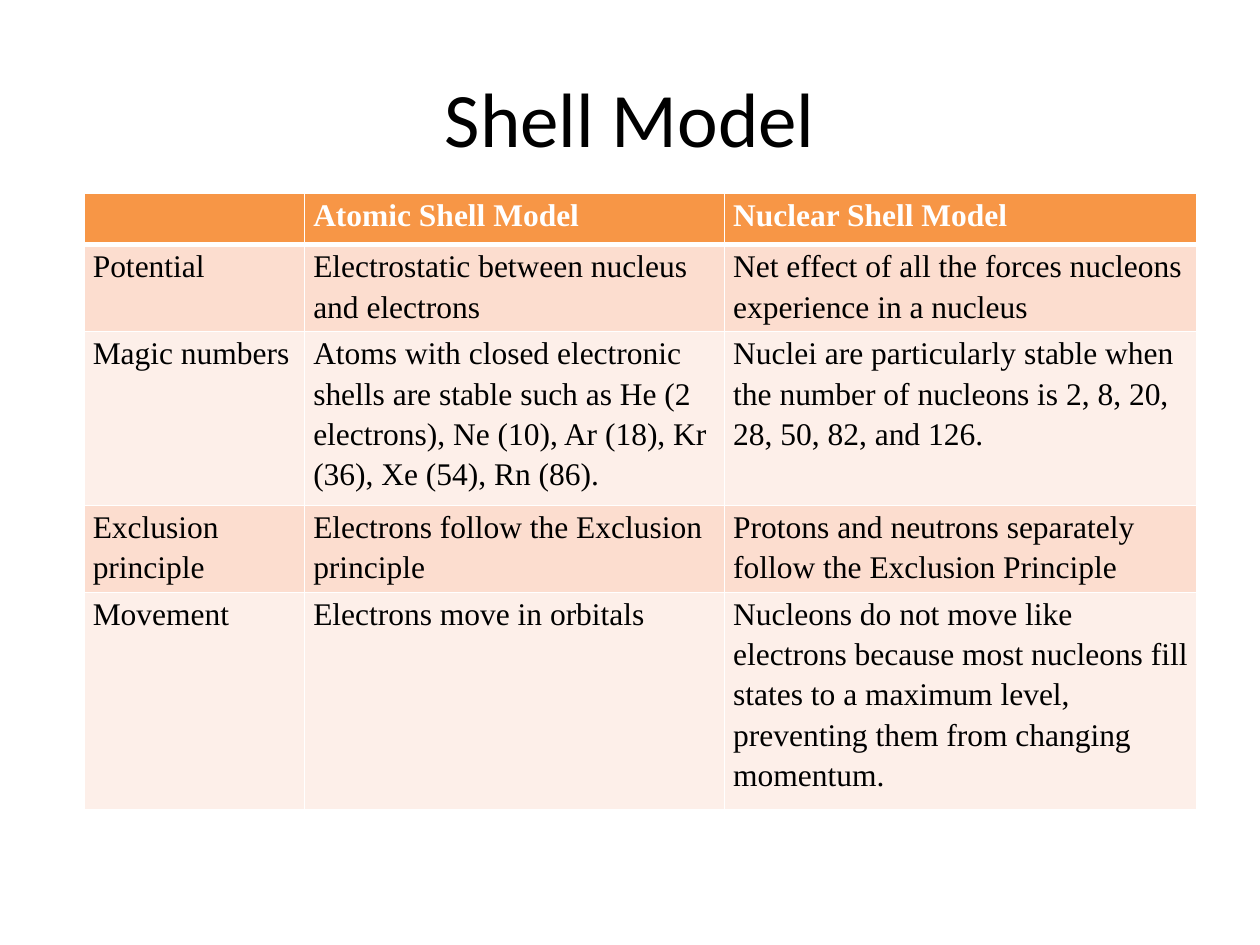
import dataclasses

import lxml.etree
import pptx
import pptx.dml.color
import pptx.enum.text
import pptx.oxml.ns
import pptx.util

ALIGN = pptx.enum.text.PP_ALIGN
ANCHOR = pptx.enum.text.MSO_ANCHOR
GRID_COLS, GRID_ROWS = 120, 90

COLUMN_SPANS = (21, 40, 45)
ROWS = (
    ("", "Atomic Shell Model", "Nuclear Shell Model"),
    ("Potential",
     "Electrostatic between nucleus and electrons",
     "Net effect of all the forces nucleons experience in a nucleus"),
    ("Magic numbers",
     "Atoms with closed electronic shells are stable such as He (2 electrons), "
     "Ne (10), Ar (18), Kr (36), Xe (54), Rn (86).",
     "Nuclei are particularly stable when the number of nucleons is "
     "2, 8, 20, 28, 50, 82, and 126."),
    ("Exclusion principle",
     "Electrons follow the Exclusion principle",
     "Protons and neutrons separately follow the Exclusion Principle"),
    ("Movement",
     "Electrons move in orbitals",
     "Nucleons do not move like electrons because most nucleons fill states "
     "to a maximum level, preventing them from changing momentum."),
)


@dataclasses.dataclass(frozen=True)
class Theme:
    title_font: str = "Calibri"
    body_font: str = "Times New Roman"
    title_size: int = 44
    body_size: int = 18
    ink: str = "000000"
    paper: str = "FFFFFF"
    header: str = "F79646"
    bands: tuple = ("FCDDCF", "FDEFE9")
    rule: int = 1
    header_rule: int = 3


def rgb(value):
    return pptx.dml.color.RGBColor.from_string(value)


def write(tf, text, *, font, size, color, bold=False, align=ALIGN.LEFT, spacing=1.0):
    p = tf.paragraphs[0]
    p.alignment, p.line_spacing = align, spacing
    r = p.add_run()
    r.text = text
    r.font.name, r.font.size, r.font.bold = font, pptx.util.Pt(size), bold
    r.font.color.rgb = rgb(color)


def set_borders(cell, color, **widths):
    """Draw cell edges; widths in points, keyed L, R, T, B in that order."""
    qn = pptx.oxml.ns.qn
    tc_pr = cell._tc.get_or_add_tcPr()
    for side, width in widths.items():
        ln = lxml.etree.SubElement(tc_pr, qn(f"a:ln{side}"), w=str(pptx.util.Pt(width)))
        fill = lxml.etree.SubElement(ln, qn("a:solidFill"))
        lxml.etree.SubElement(fill, qn("a:srgbClr"), val=color)


class SlideBuilder:
    def __init__(self, prs, theme):
        self.theme = theme
        self.s = prs.slides.add_slide(prs.slide_layouts[6])
        self.col = prs.slide_width / GRID_COLS
        self.row = prs.slide_height / GRID_ROWS

    def box(self, left, top, width, height):
        """Turn grid columns and rows into slide lengths."""
        return (round(left * self.col), round(top * self.row),
                round(width * self.col), round(height * self.row))

    def title(self, text, *place):
        t = self.theme
        tf = self.s.shapes.add_textbox(*self.box(*place)).text_frame
        tf.word_wrap = True
        tf.vertical_anchor = ANCHOR.MIDDLE
        write(tf, text, font=t.title_font, size=t.title_size, color=t.ink,
              align=ALIGN.CENTER)

    def table(self, rows, spans, left, top, row_height):
        place = self.box(left, top, sum(spans), row_height * len(rows))
        table = self.s.shapes.add_table(len(rows), len(spans), *place).table
        for column, span in zip(table.columns, spans):
            column.width = round(span * self.col)
        for i, texts in enumerate(rows):
            table.rows[i].height = round(row_height * self.row)
            for j, text in enumerate(texts):
                self.cell(table.cell(i, j), text, i)

    def cell(self, cell, text, row):
        t = self.theme
        is_header = row == 0
        set_borders(cell, t.paper, L=t.rule, R=t.rule,
                    T=t.header_rule if row == 1 else t.rule,
                    B=t.header_rule if is_header else t.rule)
        cell.fill.solid()
        cell.fill.fore_color.rgb = rgb(t.header if is_header else t.bands[(row - 1) % 2])
        if text:
            cell.margin_left = cell.margin_right = pptx.util.Inches(0.07)
            cell.margin_top = cell.margin_bottom = 0
            write(cell.text_frame, text, font=t.body_font, size=t.body_size,
                  color=t.paper if is_header else t.ink, bold=is_header, spacing=1.15)


def main():
    prs = pptx.Presentation()
    prs.slide_width, prs.slide_height = pptx.util.Inches(10), pptx.util.Inches(7.5)
    slide = SlideBuilder(prs, Theme())
    slide.title("Shell Model", 6, 3.6, 108, 15)
    slide.table(ROWS, COLUMN_SPANS, left=8, top=18.4, row_height=4.9)
    prs.save("out.pptx")


if __name__ == "__main__":
    main()
